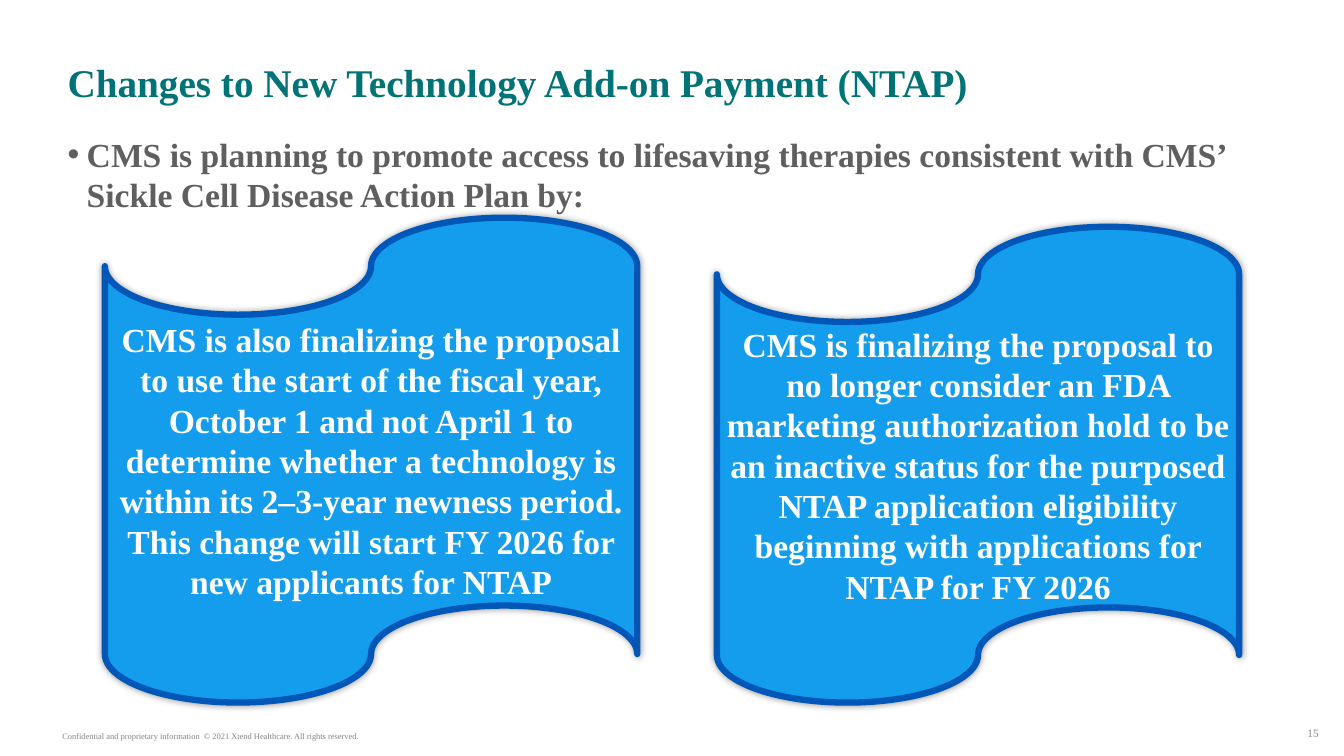
from dataclasses import dataclass

from lxml import etree
from pptx import Presentation
from pptx import util as u
from pptx.dml.color import RGBColor
from pptx.enum import shapes, text
from pptx.oxml import ns

Inches = u.Inches
Align = text.PP_ALIGN


@dataclass(frozen=True)
class Theme:
    font: str = "Times New Roman"
    teal: str = "007377"
    gray: str = "5F5F5F"
    pale: str = "838383"
    white: str = "FFFFFF"
    blue: str = "139DEC"
    edge: str = "0057B8"
    shade: str = "000000"
    head: float = 28
    body: float = 24
    page: float = 8
    note: float = 6


LOOK = Theme()


def color(code):
    return RGBColor.from_string(code)


def place(item, box):
    item.left, item.top, item.width, item.height = map(Inches, box)


def write(item, words, size, tint, align=Align.LEFT, bold=True,
          anchor=text.MSO_ANCHOR.TOP, side=0.1, wrap=True):
    """Fill a shape with one styled paragraph and return it."""
    frame = item.text_frame
    frame.text = words
    frame.auto_size = text.MSO_AUTO_SIZE.NONE
    frame.word_wrap = wrap
    frame.vertical_anchor = anchor
    frame.margin_left = frame.margin_right = Inches(side)
    frame.margin_top = frame.margin_bottom = Inches(0.05)
    para = frame.paragraphs[0]
    para.alignment = align
    para.space_before = u.Pt(0)
    for run in para.runs:
        run.font.name = LOOK.font
        run.font.size = u.Pt(size)
        run.font.bold = bold
        run.font.color.rgb = color(tint)
    return para


def bullet(para, indent):
    props = para._p.get_or_add_pPr()
    props.set("marL", str(Inches(indent)))
    props.set("indent", str(Inches(-indent)))
    mark = etree.SubElement(props, ns.qn("a:buChar"))
    mark.set("char", "•")


def glow(shape):
    """Add a soft, centred shadow around a shape."""
    shape.shadow.inherit = False
    effects = shape._element.spPr.find(ns.qn("a:effectLst"))
    outer = etree.SubElement(effects, ns.qn("a:outerShdw"),
                             blurRad=str(u.Pt(5)), dist="0", dir="0",
                             algn="ctr", rotWithShape="0")
    tint = etree.SubElement(outer, ns.qn("a:srgbClr"), val=LOOK.shade)
    etree.SubElement(tint, ns.qn("a:alpha"), val="40000")


def header(slide, box):
    title = slide.shapes.title
    place(title, box)
    write(title, "Changes to New Technology Add-on Payment (NTAP)",
          LOOK.head, LOOK.teal, side=0)


def intro(slide, box):
    body = slide.placeholders[1]
    place(body, box)
    para = write(body, "CMS is planning to promote access to lifesaving "
                 "therapies consistent with CMS’ Sickle Cell Disease "
                 "Action Plan by:", LOOK.body, LOOK.gray, side=0)
    bullet(para, 0.19)


def banner(slide, box, words):
    tape = slide.shapes.add_shape(
        shapes.MSO_SHAPE.FLOWCHART_PUNCHED_TAPE, *map(Inches, box))
    tape.fill.solid()
    tape.fill.fore_color.rgb = color(LOOK.blue)
    tape.line.color.rgb = color(LOOK.edge)
    tape.line.width = u.Pt(4.5)
    glow(tape)
    write(tape, words, LOOK.body, LOOK.white, Align.CENTER,
          anchor=text.MSO_ANCHOR.MIDDLE)


def footer(slide, box):
    left, top, width, height = box
    note = slide.shapes.add_textbox(
        *map(Inches, (left, top + 0.04, 3.16, 0.2)))
    write(note, "Confidential and proprietary information  © 2021 Xtend "
          "Healthcare. All rights reserved.", LOOK.note, LOOK.pale,
          bold=False, wrap=False)
    page = slide.shapes.add_textbox(
        *map(Inches, (left + width - 0.76, top, 0.76, height)))
    write(page, "15", LOOK.page, LOOK.pale, Align.RIGHT, bold=False, side=0)


def main():
    deck = Presentation()
    deck.slide_width, deck.slide_height = Inches(13.33), Inches(7.5)
    slide = deck.slides.add_slide(deck.slide_layouts[1])

    # Heading and lead-in
    header(slide, (0.67, 0.53, 12, 0.66))
    intro(slide, (0.67, 1.28, 12, 0.88))

    # Two finalized proposals
    banner(slide, (1.04, 2.16, 5.28, 4.81),
           "CMS is also finalizing the proposal to use the start of the "
           "fiscal year, October 1 and not April 1 to determine whether a "
           "technology is within its 2–3-year newness period. This change "
           "will start FY 2026 for new applicants for NTAP")
    banner(slide, (7.11, 2.25, 5.18, 4.72),
           "CMS is finalizing the proposal to no longer consider an FDA "
           "marketing authorization hold to be an inactive status for the "
           "purposed NTAP application eligibility beginning with "
           "applications for NTAP for FY 2026")

    # Footer strip
    footer(slide, (0.52, 7.16, 12.56, 0.27))
    deck.save("out.pptx")


if __name__ == "__main__":
    main()
